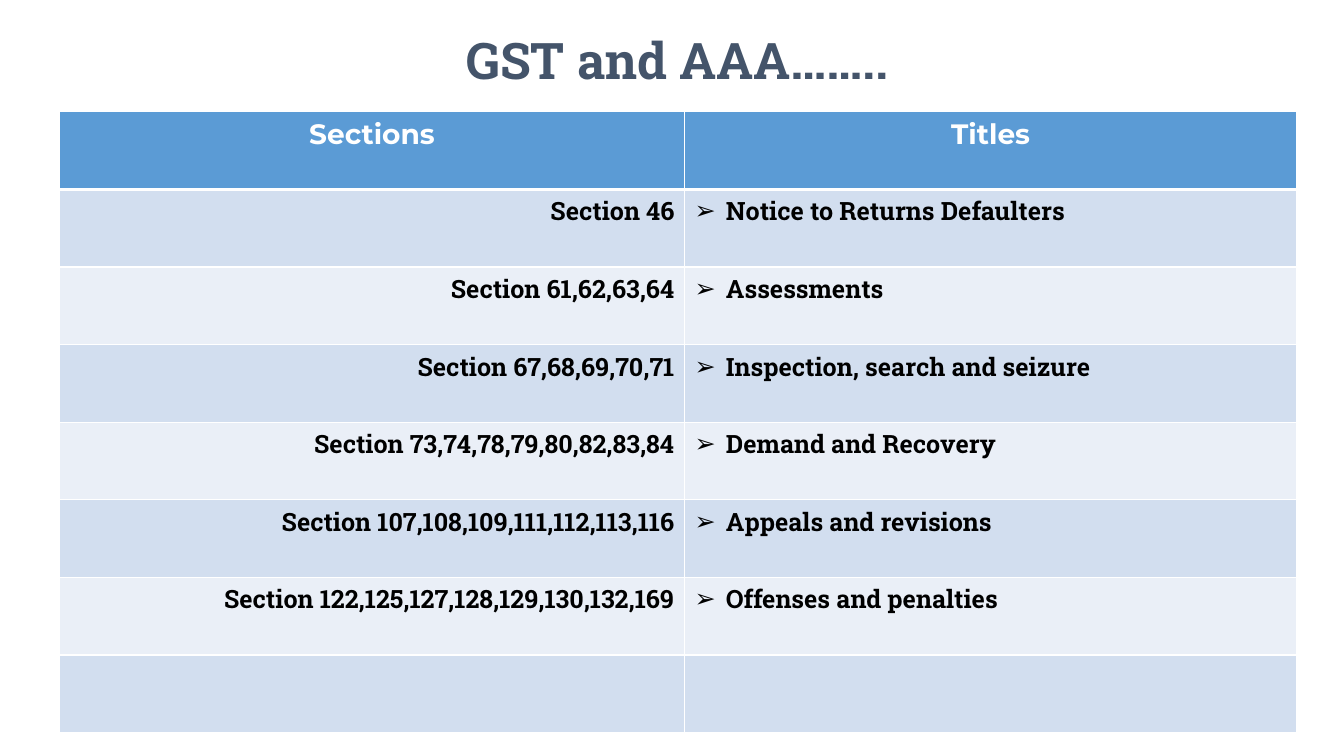
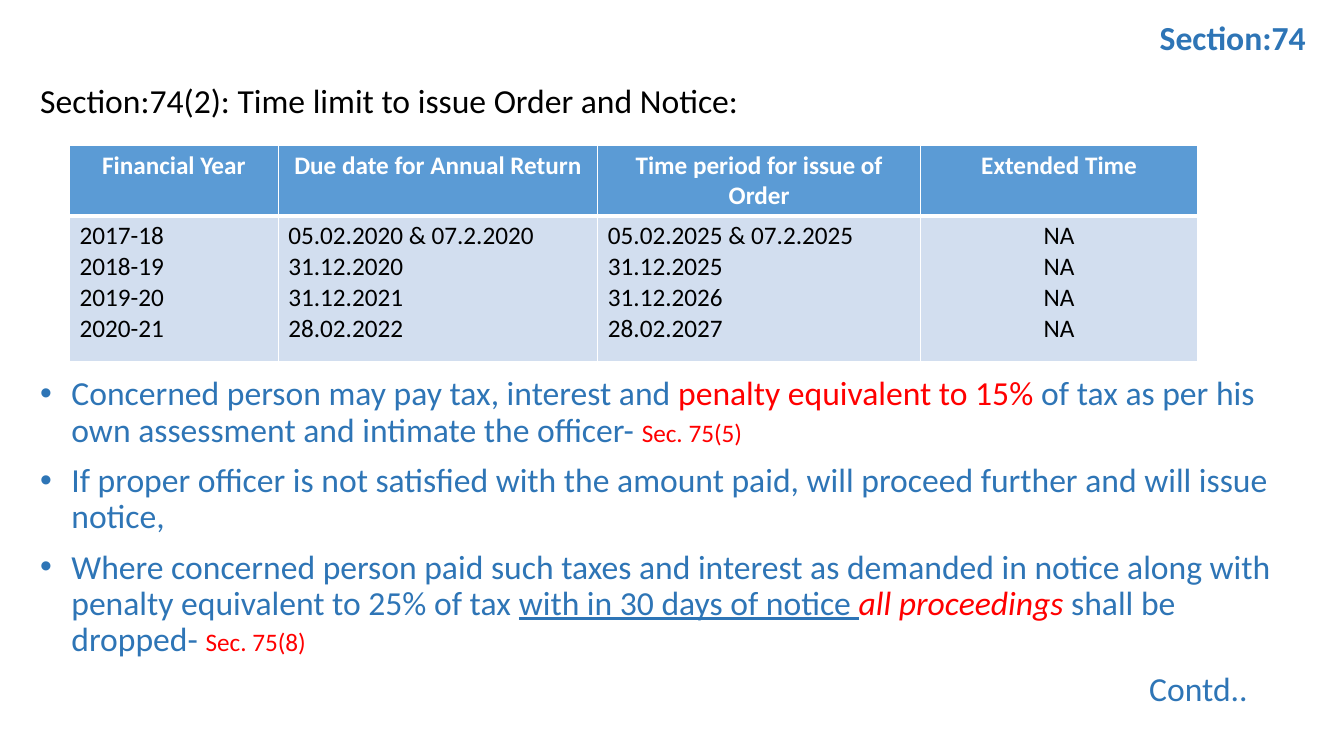
import dataclasses

import lxml.etree
import pptx
import pptx.dml.color
import pptx.enum.text
import pptx.oxml.ns
import pptx.util

RGBColor = pptx.dml.color.RGBColor
ALIGN = pptx.enum.text.PP_ALIGN
ANCHOR = pptx.enum.text.MSO_ANCHOR
qn = pptx.oxml.ns.qn

EMU_PER_PX = 9144
SLIDE_WIDTH, SLIDE_HEIGHT = 1333, 750
INDENT = 31

WHITE = RGBColor(0xFF, 0xFF, 0xFF)
BLACK = RGBColor(0x00, 0x00, 0x00)
SLATE = RGBColor(0x44, 0x54, 0x6A)
BLUE = RGBColor(0x2E, 0x75, 0xB6)
RED = RGBColor(0xFF, 0x00, 0x00)
HEADER_FILL = RGBColor(0x5B, 0x9B, 0xD5)
BAND_FILLS = (RGBColor(0xD2, 0xDE, 0xEF), RGBColor(0xEA, 0xEF, 0xF7))


@dataclasses.dataclass(frozen=True)
class Style:
    size: int
    color: RGBColor
    font: str = "Calibri"
    bold: bool = False
    italic: bool = False
    underline: bool = False


@dataclasses.dataclass(frozen=True)
class Column:
    width: int
    align: ALIGN = ALIGN.LEFT
    bullet: str = ""


SLAB_TITLE = Style(36, SLATE, "Roboto Slab", bold=True)
SLAB_HEADER = Style(20, WHITE, "Montserrat", bold=True)
SLAB_CELL = Style(18, BLACK, "Roboto Slab", bold=True)
SECTION_TITLE = Style(24, BLUE, bold=True)
LIMIT_HEADER = Style(18, WHITE, bold=True)
LIMIT_CELL = Style(18, BLACK)
LEAD = Style(24, BLACK)
BODY = Style(24, BLUE)
ALERT = Style(24, RED)
ALERT_ITALIC = Style(24, RED, italic=True)
UNDERLINED = Style(24, BLUE, underline=True)
REFERENCE = Style(18, RED)

SECTION_ROWS = [
    ("Sections", "Titles"),
    ("Section 46", "Notice to Returns Defaulters"),
    ("Section 61,62,63,64", "Assessments"),
    ("Section 67,68,69,70,71", "Inspection, search and seizure"),
    ("Section 73,74,78,79,80,82,83,84", "Demand and Recovery"),
    ("Section 107,108,109,111,112,113,116", "Appeals and revisions"),
    ("Section 122,125,127,128,129,130,132,169", "Offenses and penalties"),
    ("", ""),
]

LIMIT_ROWS = [
    (
        "Financial Year",
        "Due date for Annual Return",
        "Time period for issue of Order",
        "Extended Time",
    ),
    (
        "2017-18\n2018-19\n2019-20\n2020-21",
        "05.02.2020 & 07.2.2020\n31.12.2020\n31.12.2021\n28.02.2022",
        "05.02.2025 & 07.2.2025\n31.12.2025\n31.12.2026\n28.02.2027",
        "NA\nNA\nNA\nNA",
    ),
]

PAYMENT_POINTS = [
    [
        ("Concerned person may pay tax, interest and ", BODY),
        ("penalty equivalent to 15% ", ALERT),
        ("of tax as per his own assessment and intimate the officer- ", BODY),
        ("Sec. 75(5)", REFERENCE),
    ],
    [
        (
            "If proper officer is not satisfied with the amount paid, "
            "will proceed further and will issue notice,",
            BODY,
        ),
    ],
    [
        (
            "Where concerned person paid such taxes and interest as demanded "
            "in notice along with penalty equivalent to 25% of tax ",
            BODY,
        ),
        ("with in 30 days of notice ", UNDERLINED),
        ("all proceedings ", ALERT_ITALIC),
        ("shall be dropped- ", BODY),
        ("Sec. 75(8)", REFERENCE),
    ],
]


def px(length):
    return pptx.util.Emu(length * EMU_PER_PX)


def add_run(paragraph, text, style):
    run = paragraph.add_run()
    run.text = text
    font = run.font
    font.name = style.font
    font.size = pptx.util.Pt(style.size)
    font.bold = style.bold
    font.italic = style.italic
    font.underline = style.underline
    font.color.rgb = style.color


def add_bullet(paragraph, character):
    properties = paragraph._p.get_or_add_pPr()
    properties.set("marL", str(px(INDENT)))
    properties.set("indent", str(-px(INDENT)))
    lxml.etree.SubElement(properties, qn("a:buFont"), typeface="Arial")
    lxml.etree.SubElement(properties, qn("a:buChar"), char=character)


def next_paragraph(text_frame, index):
    return text_frame.add_paragraph() if index else text_frame.paragraphs[0]


def place_title(slide, box, text, style, align):
    title = slide.shapes.title
    title.left, title.top, title.width, title.height = map(px, box)
    text_frame = title.text_frame
    text_frame.word_wrap = True
    text_frame.auto_size = pptx.enum.text.MSO_AUTO_SIZE.NONE
    text_frame.vertical_anchor = ANCHOR.BOTTOM
    paragraph = text_frame.paragraphs[0]
    paragraph.alignment = align
    paragraph.line_spacing = 0.9
    add_run(paragraph, text, style)


def add_text(slide, box, paragraphs, bullet=""):
    text_frame = slide.shapes.add_textbox(*map(px, box)).text_frame
    text_frame.word_wrap = True
    for index, runs in enumerate(paragraphs):
        paragraph = next_paragraph(text_frame, index)
        paragraph.line_spacing = 0.9
        paragraph.space_before = pptx.util.Pt(10 if index else 0)
        if bullet:
            add_bullet(paragraph, bullet)
        for text, style in runs:
            add_run(paragraph, text, style)


def set_borders(cell, top, bottom):
    properties = cell._tc.get_or_add_tcPr()
    for side, points in (("L", 1), ("R", 1), ("T", top), ("B", bottom)):
        line = lxml.etree.SubElement(
            properties, qn(f"a:ln{side}"), w=str(pptx.util.Pt(points))
        )
        fill = lxml.etree.SubElement(line, qn("a:solidFill"))
        lxml.etree.SubElement(fill, qn("a:srgbClr"), val=str(WHITE))


def fill_cell(cell, text, style, align, bullet):
    if not text:
        return
    for index, line in enumerate(text.split("\n")):
        paragraph = next_paragraph(cell.text_frame, index)
        paragraph.alignment = align
        if bullet:
            add_bullet(paragraph, bullet)
        add_run(paragraph, line, style)


def add_banded_table(slide, left, top, columns, heights, rows, header_style, cell_style):
    width = sum(column.width for column in columns)
    frame = slide.shapes.add_table(
        len(rows), len(columns), px(left), px(top), px(width), px(sum(heights))
    )
    table = frame.table
    table.horz_banding = False
    for table_column, column in zip(table.columns, columns):
        table_column.width = px(column.width)
    for row_index, (height, texts) in enumerate(zip(heights, rows)):
        table.rows[row_index].height = px(height)
        header = row_index == 0
        for column_index, (column, text) in enumerate(zip(columns, texts)):
            cell = table.cell(row_index, column_index)
            set_borders(cell, 3 if row_index == 1 else 1, 3 if header else 1)
            cell.fill.solid()
            if header:
                cell.fill.fore_color.rgb = HEADER_FILL
                fill_cell(cell, text, header_style, ALIGN.CENTER, "")
            else:
                cell.fill.fore_color.rgb = BAND_FILLS[(row_index - 1) % 2]
                fill_cell(cell, text, cell_style, column.align, column.bullet)


def add_title_only_slide(presentation):
    return presentation.slides.add_slide(presentation.slide_layouts.get_by_name("Title Only"))


def build_sections_slide(presentation):
    slide = add_title_only_slide(presentation)
    place_title(slide, (84, 31, 1176, 64), "GST and AAA……..", SLAB_TITLE, ALIGN.CENTER)
    columns = [Column(620, ALIGN.RIGHT), Column(607, bullet="➢")]
    heights = [77] * len(SECTION_ROWS)
    add_banded_table(
        slide, 59, 111, columns, heights, SECTION_ROWS, SLAB_HEADER, SLAB_CELL
    )


def build_time_limit_slide(presentation):
    slide = add_title_only_slide(presentation)
    place_title(slide, (1013, 23, 292, 39), "Section:74", SECTION_TITLE, ALIGN.RIGHT)
    lead = "Section:74(2): Time limit to issue Order and Notice:"
    add_text(slide, (30, 79, 1275, 46), [[(lead, LEAD)]])
    columns = [Column(207), Column(317), Column(320), Column(275, ALIGN.CENTER)]
    add_banded_table(
        slide, 69, 144, columns, [70, 145], LIMIT_ROWS, LIMIT_HEADER, LIMIT_CELL
    )
    add_text(slide, (30, 369, 1275, 290), PAYMENT_POINTS, "•")
    add_text(slide, (1130, 662, 140, 46), [[("Contd..", BODY)]])


def main():
    presentation = pptx.Presentation()
    presentation.slide_width = px(SLIDE_WIDTH)
    presentation.slide_height = px(SLIDE_HEIGHT)
    build_sections_slide(presentation)
    build_time_limit_slide(presentation)
    presentation.save("out.pptx")


if __name__ == "__main__":
    main()
